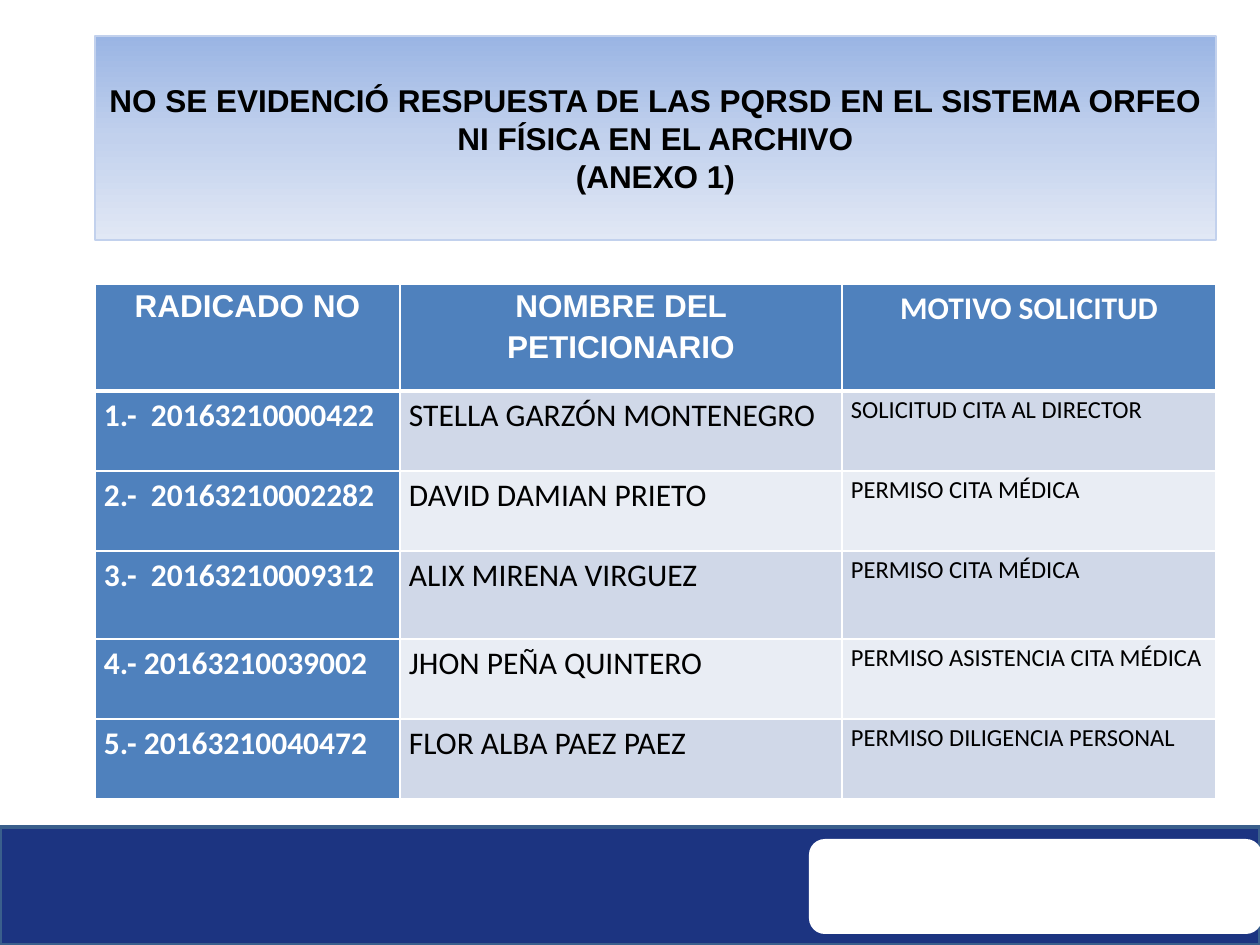
from copy import deepcopy
from dataclasses import dataclass

from lxml.etree import SubElement
from pptx import Presentation
from pptx.dml.color import RGBColor
from pptx.enum.shapes import MSO_SHAPE as Shape
from pptx.enum.text import MSO_ANCHOR as Anchor, PP_ALIGN as Align
from pptx.oxml.ns import qn
from pptx.util import Emu, Pt


@dataclass(frozen=True)
class Theme:
    """Colours, fonts and type sizes of the slide."""
    white: str = "FFFFFF"
    black: str = "000000"
    navy: str = "1C3481"
    navy_edge: str = "3A5F8C"
    blue: str = "4F81BD"
    bands: tuple = ("D0D8E8", "E9EDF4")
    title_gradient: tuple = ("9AB5E4", "C2D1ED", "E1E8F5")
    title_edge: str = "C2D1ED"
    heading_font: str = "Arial"
    body_font: str = "Calibri"
    large: int = 18
    small: int = 14


def px(length):
    """Turn pixels at 126 to the inch into EMU."""
    return Emu(round(length * 914400 / 126))


class SlideBuilder:
    """Draws styled elements on the current slide."""

    def __init__(self, slide, theme):
        self.slide = slide
        self.theme = theme

    def format_text(self, paragraph, font_name, size, color, bold, align):
        """Align a paragraph and format its runs."""
        paragraph.alignment = align
        for run in paragraph.runs:
            font = run.font
            font.name, font.size, font.bold = font_name, Pt(size), bold
            font.color.rgb = RGBColor.from_string(color)

    def box(self, kind, bounds, fill, edge=None, edge_width=1):
        """Add a plain filled shape."""
        shape = self.slide.shapes.add_shape(kind, *map(px, bounds))
        shape.shadow.inherit = False
        shape.fill.solid()
        shape.fill.fore_color.rgb = RGBColor.from_string(fill)
        if edge:
            shape.line.color.rgb = RGBColor.from_string(edge)
            shape.line.width = Pt(edge_width)
        else:
            shape.line.fill.background()
        return shape

    def title(self, bounds, text):
        """Add the gradient title box."""
        theme = self.theme
        shape = self.box(Shape.RECTANGLE, bounds, theme.white, theme.title_edge, 0.75)
        shape.fill.gradient()
        shape.fill.gradient_angle = 270
        stop_list = shape._element.spPr.find(qn("a:gradFill")).find(qn("a:gsLst"))
        stop_list.insert(1, deepcopy(stop_list[0]))
        for index, (stop, color) in enumerate(zip(shape.fill.gradient_stops, theme.title_gradient)):
            stop.position = index / 2
            stop.color.rgb = RGBColor.from_string(color)
        frame = shape.text_frame
        frame.word_wrap = True
        frame.vertical_anchor = Anchor.MIDDLE
        frame.text = text
        for paragraph in frame.paragraphs:
            self.format_text(paragraph, theme.heading_font, theme.large, theme.black, True, Align.CENTER)

    def cell_borders(self, cell, bottom_width):
        """Draw white borders around a cell."""
        properties = cell._tc.get_or_add_tcPr()
        widths = {"a:lnL": 1, "a:lnR": 1, "a:lnT": 1, "a:lnB": bottom_width}
        for index, (tag, width) in enumerate(widths.items()):
            line = SubElement(properties, qn(tag), w=str(Pt(width)))
            SubElement(SubElement(line, qn("a:solidFill")), qn("a:srgbClr"), val=self.theme.white)
            properties.insert(index, line)

    def cell(self, cell, text, fill, style, bottom_width=1):
        """Fill, border and write one table cell."""
        cell.margin_left = cell.margin_right = px(9)
        cell.margin_top = cell.margin_bottom = 0
        cell.fill.solid()
        cell.fill.fore_color.rgb = RGBColor.from_string(fill)
        self.cell_borders(cell, bottom_width)
        cell.text_frame.text = text
        paragraph = cell.text_frame.paragraphs[0]
        paragraph.line_spacing = 1.15
        self.format_text(paragraph, *style)

    def table(self, left, top, widths, heights, header, records):
        """Add the table of requests with banded rows."""
        theme = self.theme
        bounds = (left, top, sum(widths), sum(heights))
        table = self.slide.shapes.add_table(len(heights), len(widths), *map(px, bounds)).table
        table.first_row = table.horz_banding = False
        for column, width in zip(table.columns, widths):
            column.width = px(width)
        for row, height in zip(table.rows, heights):
            row.height = px(height)
        header_fonts = (theme.heading_font, theme.heading_font, theme.body_font)
        for index, (text, font) in enumerate(zip(header, header_fonts)):
            style = (font, theme.large, theme.white, True, Align.CENTER)
            self.cell(table.cell(0, index), text, theme.blue, style, 3)
        body_styles = (
            (theme.body_font, theme.large, theme.white, True, Align.LEFT),
            (theme.body_font, theme.large, theme.black, False, Align.JUSTIFY),
            (theme.body_font, theme.small, theme.black, False, Align.JUSTIFY),
        )
        for row, record in enumerate(records, 1):
            band = theme.bands[(row - 1) % 2]
            for index, (text, style) in enumerate(zip(record, body_styles)):
                fill = band if index else theme.blue
                self.cell(table.cell(row, index), text, fill, style)


HEADER = ("RADICADO NO", "NOMBRE DEL PETICIONARIO", "MOTIVO SOLICITUD")
REQUESTS = (
    ("1.-  20163210000422", "STELLA GARZÓN MONTENEGRO", "SOLICITUD CITA AL DIRECTOR"),
    ("2.-  20163210002282", "DAVID DAMIAN PRIETO", "PERMISO CITA MÉDICA"),
    ("3.-  20163210009312", "ALIX MIRENA VIRGUEZ", "PERMISO CITA MÉDICA"),
    ("4.- 20163210039002", "JHON PEÑA QUINTERO", "PERMISO ASISTENCIA CITA MÉDICA"),
    ("5.- 20163210040472", "FLOR ALBA PAEZ PAEZ", "PERMISO DILIGENCIA PERSONAL"),
)
TITLE = "NO SE EVIDENCIÓ RESPUESTA DE LAS PQRSD EN EL SISTEMA ORFEO NI FÍSICA EN EL ARCHIVO\n(ANEXO 1)"


def main():
    """Build and save the presentation."""
    presentation = Presentation()
    presentation.slide_width, presentation.slide_height = px(1260), px(945)
    theme = Theme()
    builder = SlideBuilder(presentation.slides.add_slide(presentation.slide_layouts[6]), theme)
    builder.box(Shape.RECTANGLE, (0, 827, 1260, 118), theme.navy, theme.navy_edge, 2)
    builder.box(Shape.ROUNDED_RECTANGLE, (809, 839, 453, 95), theme.white)
    builder.table(95, 284, (305, 442, 374), (107, 80, 80, 88, 80, 80), HEADER, REQUESTS)
    builder.title((95, 36, 1121, 204), TITLE)
    presentation.save("out.pptx")


if __name__ == "__main__":
    main()
